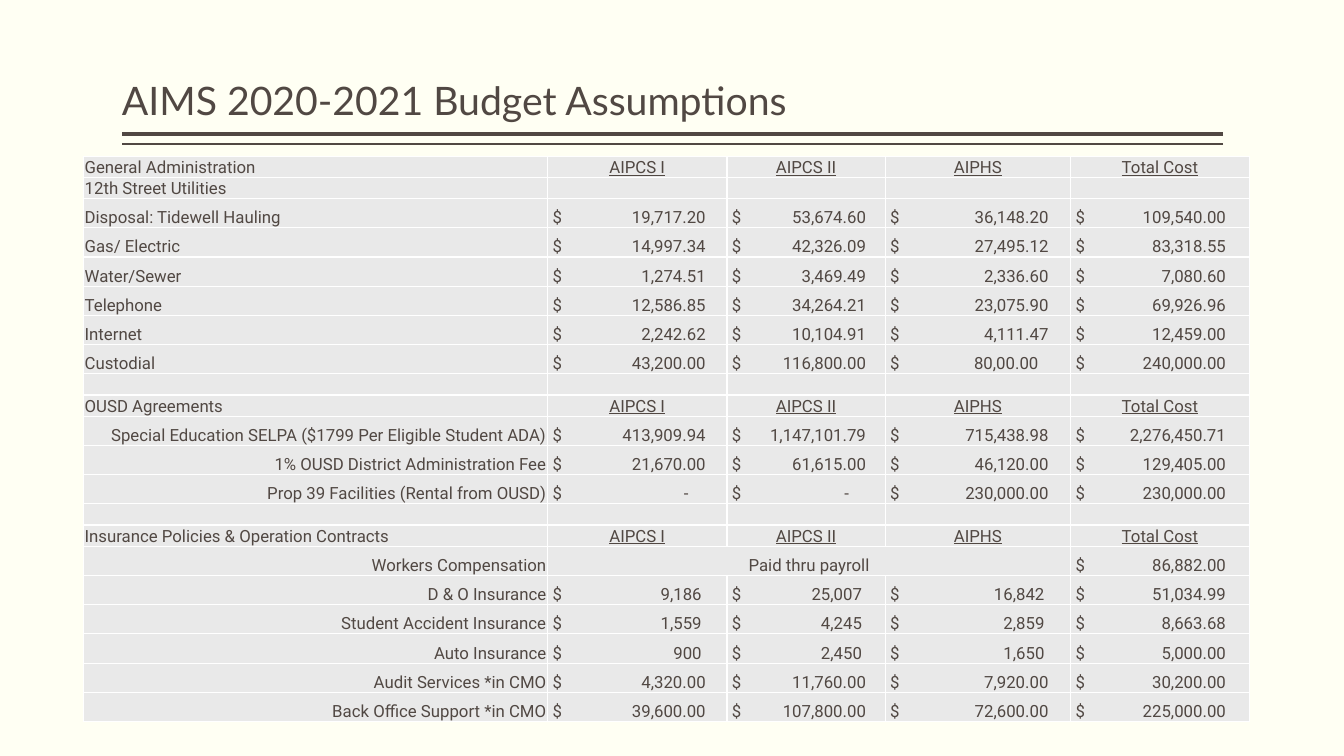
import lxml.etree
import pptx
import pptx.dml.color
import pptx.enum.shapes
import pptx.enum.text
import pptx.oxml.ns
import pptx.util

Inches = pptx.util.Inches
Pt = pptx.util.Pt
ALIGN = pptx.enum.text.PP_ALIGN
BOTTOM = pptx.enum.text.MSO_ANCHOR.BOTTOM
qn = pptx.oxml.ns.qn
COLORS = {
    name: pptx.dml.color.RGBColor.from_string(value)
    for name, value in {
        "page": "FFFFF3", "ink": "514843", "cell": "E9E9E9", "border": "FFFFFF",
    }.items()
}

HEADINGS = ["AIPCS I", "AIPCS II", "AIPHS", "Total Cost"]
# Section title, alignment of its labels, its rows
SECTIONS = [
    ("General Administration", ALIGN.LEFT, [
        ("12th Street Utilities",),
        ("Disposal: Tidewell Hauling", "19,717.20", "53,674.60", "36,148.20", "109,540.00"),
        ("Gas/ Electric", "14,997.34", "42,326.09", "27,495.12", "83,318.55"),
        ("Water/Sewer", "1,274.51", "3,469.49", "2,336.60", "7,080.60"),
        ("Telephone", "12,586.85", "34,264.21", "23,075.90", "69,926.96"),
        ("Internet", "2,242.62", "10,104.91", "4,111.47", "12,459.00"),
        ("Custodial", "43,200.00", "116,800.00", "80,00.00", "240,000.00"),
        ("",),
    ]),
    ("OUSD Agreements", ALIGN.RIGHT, [
        ("Special Education SELPA ($1799 Per Eligible Student ADA)",
         "413,909.94", "1,147,101.79", "715,438.98", "2,276,450.71"),
        ("1% OUSD District Administration Fee", "21,670.00", "61,615.00", "46,120.00", "129,405.00"),
        ("Prop 39 Facilities (Rental from OUSD)", "-", "-", "230,000.00", "230,000.00"),
        ("",),
    ]),
    ("Insurance Policies & Operation Contracts", ALIGN.RIGHT, [
        ("Workers Compensation", "Paid thru payroll", "", "", "86,882.00"),
        ("D & O Insurance", "9,186", "25,007", "16,842", "51,034.99"),
        ("Student Accident Insurance", "1,559", "4,245", "2,859", "8,663.68"),
        ("Auto Insurance", "900", "2,450", "1,650", "5,000.00"),
        ("Audit Services *in CMO", "4,320.00", "11,760.00", "7,920.00", "30,200.00"),
        ("Back Office Support *in CMO", "39,600.00", "107,800.00", "72,600.00", "225,000.00"),
    ]),
]
COLUMN_WIDTHS = [4.6, 1.78, 1.57, 1.84, 1.77]
AMOUNT_TABS = [0, 1.52, 1.33, 1.57, 1.49]
TAB_SHIFTS = {"-": 0.17, "80,00.00": 0.1}
SHORT_ROW, TALL_ROW = 0.18, 0.29


def write(frame, text, size=12, font="Roboto", align=ALIGN.LEFT, underline=False, tab=None, spacing=None):
    """Fill the first paragraph of a frame; tab is a right tab stop in inches."""
    para = frame.paragraphs[0]
    para.alignment = align
    para.line_spacing = spacing
    if tab:
        stops = lxml.etree.SubElement(para._p.get_or_add_pPr(), qn("a:tabLst"))
        lxml.etree.SubElement(stops, qn("a:tab"), pos=str(Inches(tab)), algn="r")
    if text:
        span = para.add_run()
        span.text = text
        span.font.size = Pt(size)
        span.font.name = font
        span.font.underline = underline
        span.font.color.rgb = COLORS["ink"]
    else:
        para._p.get_or_add_endParaRPr().set("sz", str(size * 100))


def style_cell(cell, left_margin):
    cell.vertical_anchor = BOTTOM
    cell.margin_left = Inches(left_margin)
    cell.margin_right = cell.margin_top = Inches(0.01)
    cell.margin_bottom = 0
    properties = cell._tc.get_or_add_tcPr()
    for side in ("a:lnL", "a:lnR", "a:lnT", "a:lnB"):
        border = lxml.etree.SubElement(properties, qn(side), w=str(Pt(1)))
        paint = lxml.etree.SubElement(border, qn("a:solidFill"))
        lxml.etree.SubElement(paint, qn("a:srgbClr"), val=str(COLORS["border"]))
    cell.fill.solid()
    cell.fill.fore_color.rgb = COLORS["cell"]


deck = pptx.Presentation()
deck.slide_width, deck.slide_height = Inches(13.33), Inches(7.5)
page = deck.slides.add_slide(deck.slide_layouts[6])
page.background.fill.solid()
page.background.fill.fore_color.rgb = COLORS["page"]

# Double rule under the title
for height, weight in ((1.33, 3), (1.43, 1)):
    rule = page.shapes.add_connector(
        pptx.enum.shapes.MSO_CONNECTOR.STRAIGHT,
        Inches(12.13), Inches(height), Inches(1.21), Inches(height))
    rule.line.color.rgb = COLORS["ink"]
    rule.line.width = Pt(weight)
    lxml.etree.SubElement(rule._element.spPr, qn("a:effectLst"))

title = page.shapes.add_textbox(Inches(1.21), Inches(0.08), Inches(10.92), Inches(1.2)).text_frame
title.word_wrap = True
title.vertical_anchor = BOTTOM
title.margin_left = title.margin_right = 0
write(title, "AIMS 2020-2021 Budget Assumptions", size=28, font="Lato", spacing=0.9)

# Budget table
lines = []
for section, label_align, entries in SECTIONS:
    lines.append((section, ALIGN.LEFT, HEADINGS))
    lines += [(label, label_align, amounts) for label, *amounts in entries]

table = page.shapes.add_table(
    len(lines), len(COLUMN_WIDTHS), Inches(0.83), Inches(1.55),
    Inches(sum(COLUMN_WIDTHS)), Inches(5.57)).table
table.first_row = table.horz_banding = False
for column, width in zip(table.columns, COLUMN_WIDTHS):
    column.width = Inches(width)

for row, (label, label_align, values) in enumerate(lines):
    is_heading = values is HEADINGS
    table.rows[row].height = Inches(SHORT_ROW if is_heading or not values else TALL_ROW)
    texts = [label, *values] + [""] * (len(COLUMN_WIDTHS) - 1 - len(values))
    for column, text in enumerate(texts):
        cell = table.cell(row, column)
        is_amount = column > 0 and text != "" and not is_heading and text != "Paid thru payroll"
        style_cell(cell, 0.05 if is_amount else 0.01)
        if is_amount:
            shift = TAB_SHIFTS.get(text, 0 if "." in text else 0.04)
            write(cell.text_frame, f"$\t{text}", tab=AMOUNT_TABS[column] - shift)
        elif column == 0:
            write(cell.text_frame, text, align=label_align)
        else:
            write(cell.text_frame, text, align=ALIGN.CENTER, underline=is_heading)
            if text == "Paid thru payroll":
                cell.merge(table.cell(row, column + 2))

deck.save("out.pptx")
